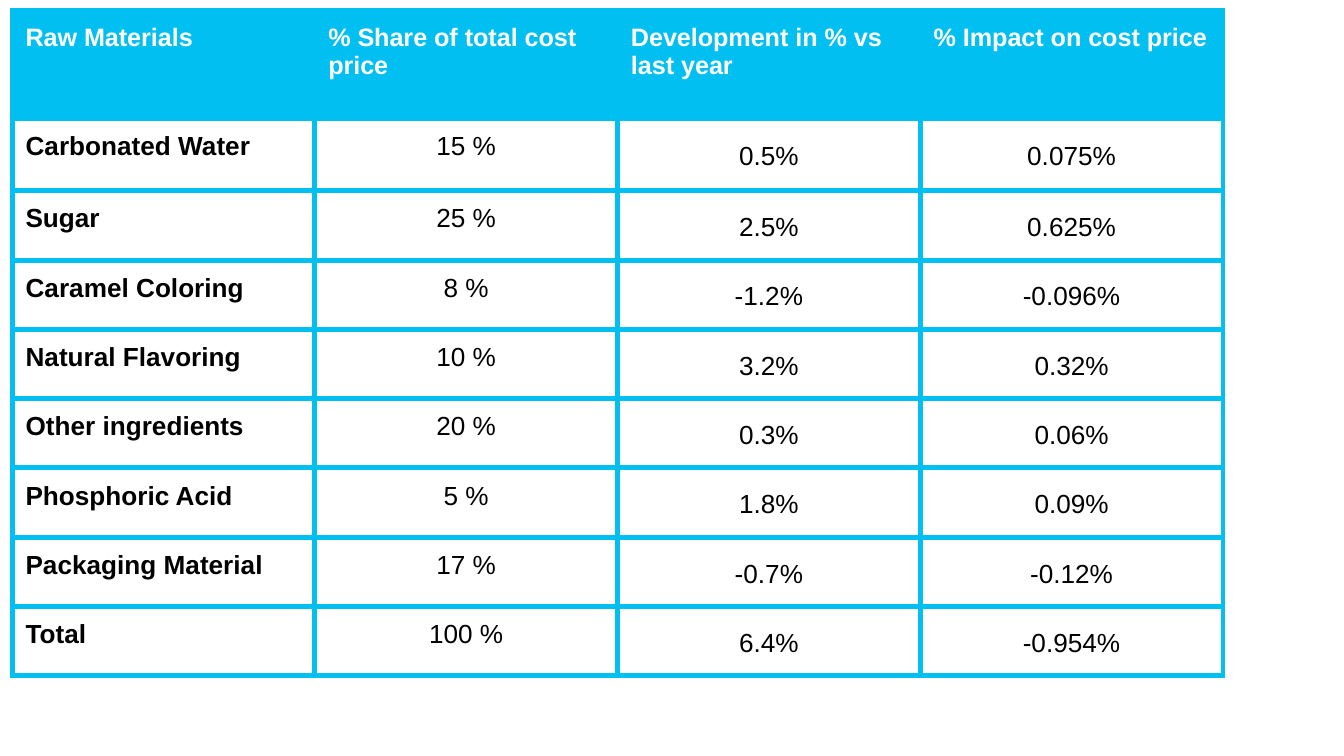
from lxml import etree
from pptx import Presentation
from pptx.dml.color import RGBColor
from pptx.enum import text
from pptx.oxml.ns import qn
from pptx.util import Inches, Pt

# Content
COLORS = {"cyan": "01BFF0", "white": "FFFFFF", "black": "000000"}
FONT = "Arial"
HEADER = ("Raw Materials", "% Share of total cost price",
          "Development in % vs last year", "% Impact on cost price")
MATERIALS = [
    ("Carbonated Water", "15 %", "0.5%", "0.075%"),
    ("Sugar", "25 %", "2.5%", "0.625%"),
    ("Caramel Coloring", "8 %", "-1.2%", "-0.096%"),
    ("Natural Flavoring", "10 %", "3.2%", "0.32%"),
    ("Other ingredients", "20 %", "0.3%", "0.06%"),
    ("Phosphoric Acid", "5 %", "1.8%", "0.09%"),
    ("Packaging Material", "17 %", "-0.7%", "-0.12%"),
    ("Total", "100 %", "6.4%", "-0.954%"),
]
ROWS = [HEADER] + MATERIALS

# Equal columns; the rows after the first material share the rest equally
TABLE_WIDTH, LOWER_HEIGHT = 9.01, 3.61
COL_WIDTH = TABLE_WIDTH / len(HEADER)
LOWER_ROWS = len(MATERIALS) - 1
ROW_HEIGHTS = [0.8, 0.54] + [LOWER_HEIGHT / LOWER_ROWS] * LOWER_ROWS


def rgb(name):
    return RGBColor.from_string(COLORS[name])


def set_borders(cell, color, width):
    """Border lines must precede the fill in the cell properties."""
    tcPr = cell._tc.get_or_add_tcPr()
    for i, side in enumerate(("lnL", "lnR", "lnT", "lnB")):
        ln = etree.Element(qn(f"a:{side}"), w=str(Pt(width)))
        fill = etree.SubElement(ln, qn("a:solidFill"))
        etree.SubElement(fill, qn("a:srgbClr"), val=COLORS[color])
        tcPr.insert(i, ln)


def fill_cell(cell, value, is_header, col):
    is_change = not is_header and col >= 2
    cell.margin_top = cell.margin_bottom = Inches(0.1)
    cell.margin_left = cell.margin_right = Inches(0.03 if is_change else 0.1)
    cell.vertical_anchor = (text.MSO_ANCHOR.MIDDLE if is_change
                            else text.MSO_ANCHOR.TOP)
    if is_header:
        cell.fill.solid()
        cell.fill.fore_color.rgb = rgb("cyan")
    else:
        cell.fill.background()
    set_borders(cell, "cyan", 3)

    p = cell.text_frame.paragraphs[0]
    p.text = value
    if not is_header and col > 0:
        p.alignment = text.PP_ALIGN.CENTER
    if is_change:
        p.line_spacing = 1.15
    font = p.runs[0].font
    font.name = FONT
    font.size = Pt(13.5 if is_header else 14)
    font.bold = is_header or col == 0
    font.color.rgb = rgb("white" if is_header else "black")


# Widescreen 16:9 slide
prs = Presentation()
prs.slide_width = Inches(10)
prs.slide_height = prs.slide_width * 9 // 16
s = prs.slides.add_slide(prs.slide_layouts[6])

# Cost price table
table = s.shapes.add_table(
    len(ROWS), len(HEADER), Inches(0.09), Inches(0.08),
    Inches(TABLE_WIDTH), Inches(sum(ROW_HEIGHTS))).table
table.horz_banding = False
for column in table.columns:
    column.width = Inches(COL_WIDTH)
for r, (values, height) in enumerate(zip(ROWS, ROW_HEIGHTS)):
    table.rows[r].height = Inches(height)
    for c, value in enumerate(values):
        fill_cell(table.cell(r, c), value, r == 0, c)

prs.save("out.pptx")
